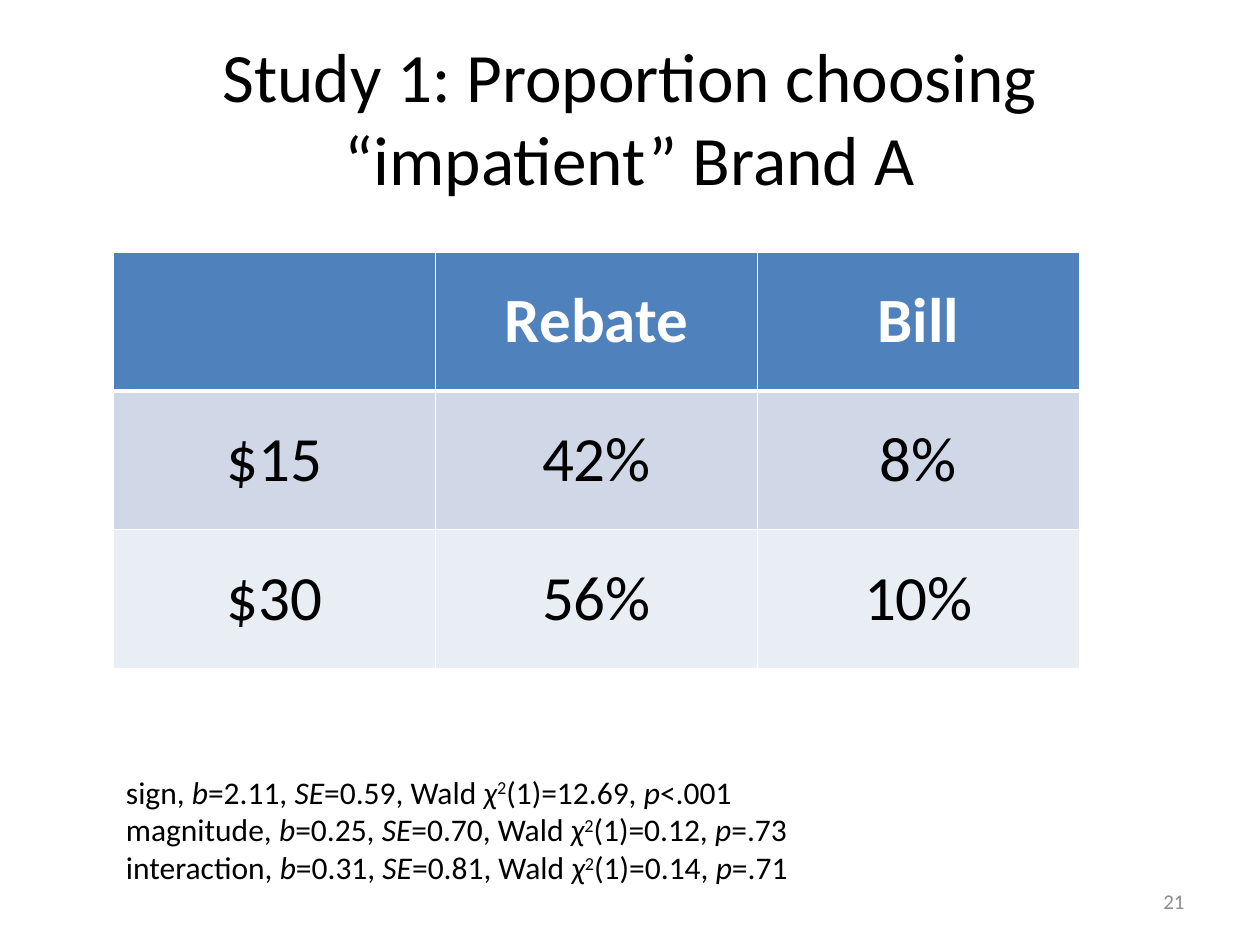
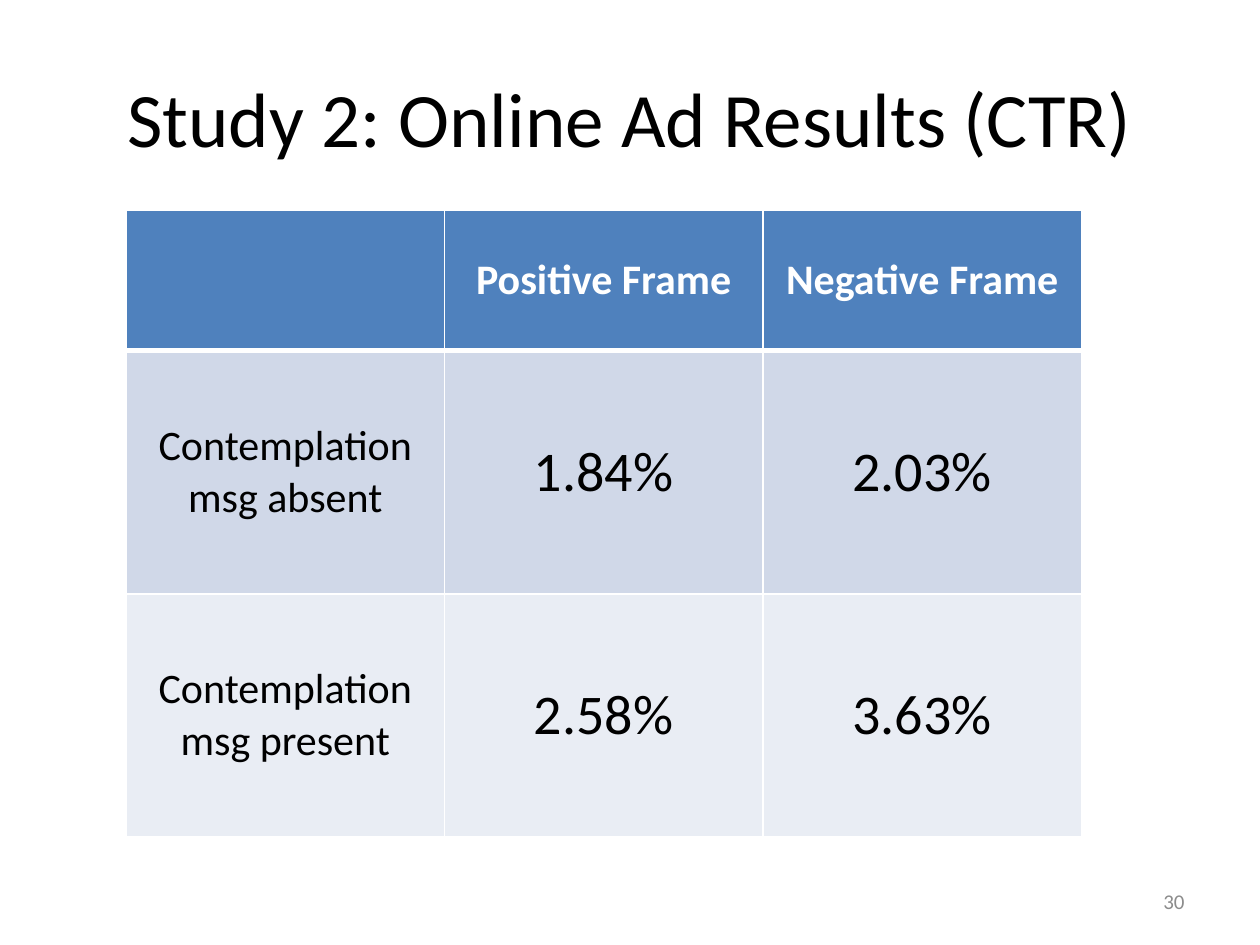
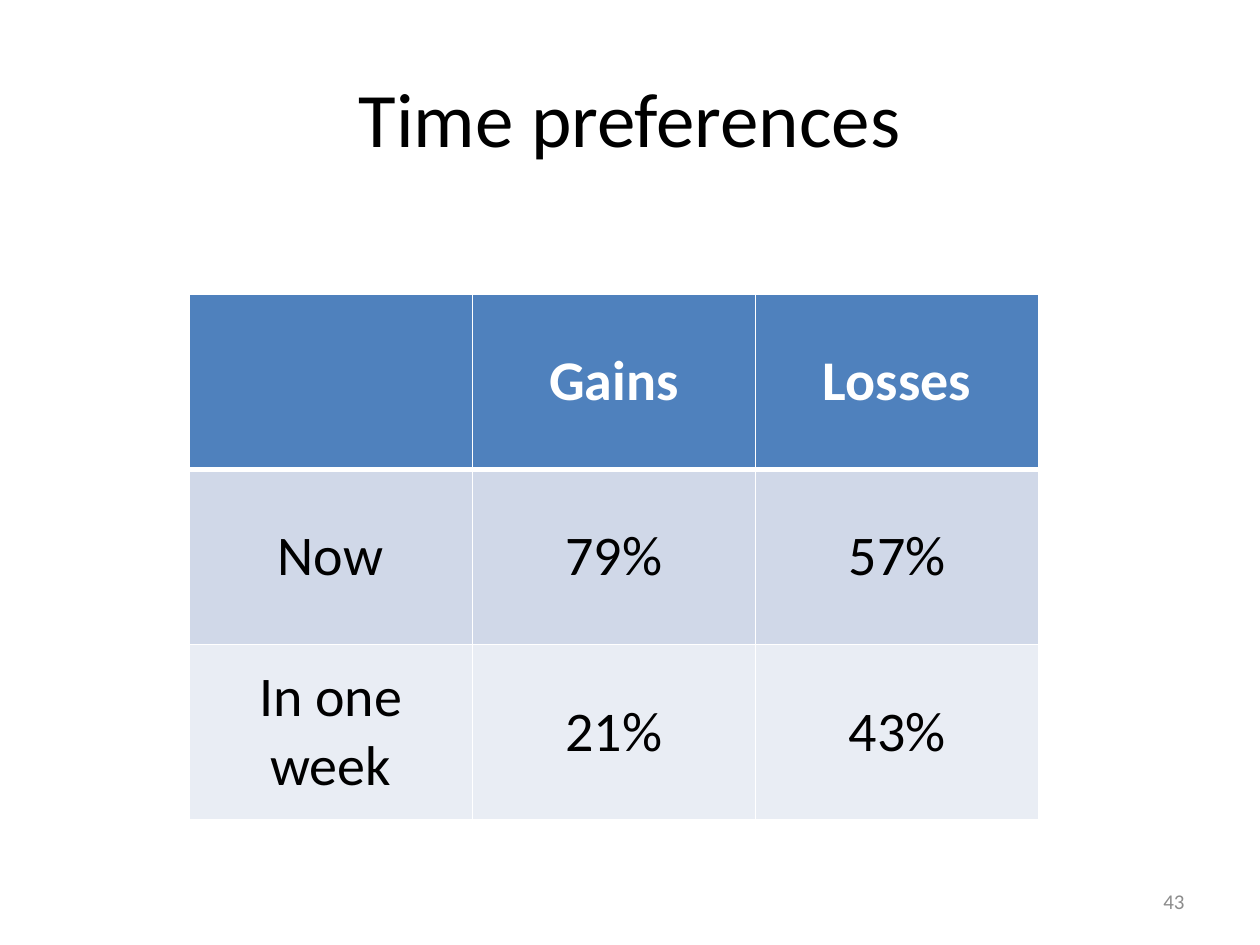
from lxml import etree
from pptx import Presentation
from pptx import util as u
from pptx.dml.color import RGBColor
from pptx.enum import text
from pptx.oxml.ns import qn

COLORS = {
    "ink": "000000",
    "white": "FFFFFF",
    "number": "8C8C8C",
    "header": "4F81BD",
    "band_dark": "D0D8E8",
    "band_light": "E9EDF4",
}
ROW_FILLS = ["header", "band_dark", "band_light"]
FONT = "Calibri"

# Content of each slide; table lengths are in cm, text sizes in points
SLIDES = [
    {
        "title": "Study 1: Proportion choosing “impatient” Brand A",
        "title_size": 39.6, "number": "21",
        "left": 2.29, "top": 5.08, "col": 6.49, "rows": [2.8, 2.8, 2.8],
        "label_size": 36, "value_size": 36,
        "cells": [["", "Rebate", "Bill"],
                  ["$15", "42%", "8%"],
                  ["$30", "56%", "10%"]],
        "stats": [("sign", "2.11", "0.59", "12.69", "<.001"),
                  ("magnitude", "0.25", "0.70", "0.12", "=.73"),
                  ("interaction", "0.31", "0.81", "0.14", "=.71")],
    },
    {
        "title": "Study 2: Online Ad Results (CTR)",
        "title_size": 44, "number": "30",
        "left": 2.54, "top": 4.24, "col": 6.42, "rows": [2.83, 4.9, 4.9],
        "label_size": 24, "value_size": 32,
        "cells": [["", "Positive Frame", "Negative Frame"],
                  ["Contemplation msg absent", "1.84%", "2.03%"],
                  ["Contemplation msg present", "2.58%", "3.63%"]],
        "stats": [],
    },
    {
        "title": "Time preferences",
        "title_size": 44, "number": "43",
        "left": 3.81, "top": 5.93, "col": 5.71, "rows": [3.53, 3.53, 3.53],
        "label_size": 32, "value_size": 32,
        "cells": [["", "Gains", "Losses"],
                  ["Now", "79%", "57%"],
                  ["In one week", "21%", "43%"]],
        "stats": [],
    },
]


def add_run(p, words, size, color="ink", **formats):
    r = p.add_run()
    r.text = words
    for name, value in {"name": FONT, "size": u.Pt(size), **formats}.items():
        setattr(r.font, name, value)
    r.font.color.rgb = RGBColor.from_string(COLORS[color])
    return r


def add_box(s, left, top, width, height, **formats):
    sp = s.shapes.add_textbox(u.Cm(left), u.Cm(top), u.Cm(width), u.Cm(height))
    tf = sp.text_frame
    for name, value in {"word_wrap": True, **formats}.items():
        setattr(tf, name, value)
    return tf


prs = Presentation()
prs.slide_width, prs.slide_height = u.Cm(25.4), u.Cm(19.05)
middle = text.MSO_ANCHOR.MIDDLE

for data in SLIDES:
    s = prs.slides.add_slide(prs.slide_layouts[6])

    # Title and slide number
    p = add_box(s, 1.27, 0.76, 22.86, 3.18, vertical_anchor=middle).paragraphs[0]
    p.alignment = text.PP_ALIGN.CENTER
    add_run(p, data["title"], data["title_size"])
    p = add_box(s, 18.21, 17.65, 5.92, 1.02, vertical_anchor=middle).paragraphs[0]
    p.alignment = text.PP_ALIGN.RIGHT
    add_run(p, data["number"], 12, "number")

    # Results table
    cells = data["cells"]
    table = s.shapes.add_table(
        len(cells), len(cells[0]), u.Cm(data["left"]), u.Cm(data["top"]),
        u.Cm(data["col"] * len(cells[0])), u.Cm(sum(data["rows"]))).table
    for column in table.columns:
        column.width = u.Cm(data["col"])
    for i, row in enumerate(cells):
        table.rows[i].height = u.Cm(data["rows"][i])
        for j, words in enumerate(row):
            cell = table.cell(i, j)
            cell.vertical_anchor = middle

            # White borders, heavier between the header and the body
            tcPr = cell._tc.get_or_add_tcPr()
            for side in ("L", "R", "T", "B"):
                heavy = (i, side) in ((0, "B"), (1, "T"))
                ln = etree.SubElement(tcPr, qn("a:ln" + side), w=str(u.Pt(3 if heavy else 1)))
                fill = etree.SubElement(ln, qn("a:solidFill"))
                etree.SubElement(fill, qn("a:srgbClr"), val=COLORS["white"])
            cell.fill.solid()
            cell.fill.fore_color.rgb = RGBColor.from_string(COLORS[ROW_FILLS[i]])

            if words:
                p = cell.text_frame.paragraphs[0]
                p.alignment = text.PP_ALIGN.CENTER
                is_label = i == 0 or j == 0
                add_run(p, words, data["label_size" if is_label else "value_size"],
                        "white" if i == 0 else "ink", bold=i == 0)

    # Test statistics under the table
    if data["stats"]:
        tf = add_box(s, 2.29, 15.45, 20.52, 2.57, auto_size=text.MSO_AUTO_SIZE.SHAPE_TO_FIT_TEXT)
        for k, (effect, b, se, chi, prob) in enumerate(data["stats"]):
            p = tf.add_paragraph() if k else tf.paragraphs[0]
            pieces = [f"{effect}, ", "b", f"={b}, ", "SE", f"={se}, Wald ",
                      "χ", "2", f"(1)={chi}, ", "p", prob]
            for piece in pieces:
                r = add_run(p, piece, 18, italic=piece in ("b", "SE", "χ", "p"))
                if piece == "2":
                    r.font._element.set("baseline", "30000")

prs.save("out.pptx")
